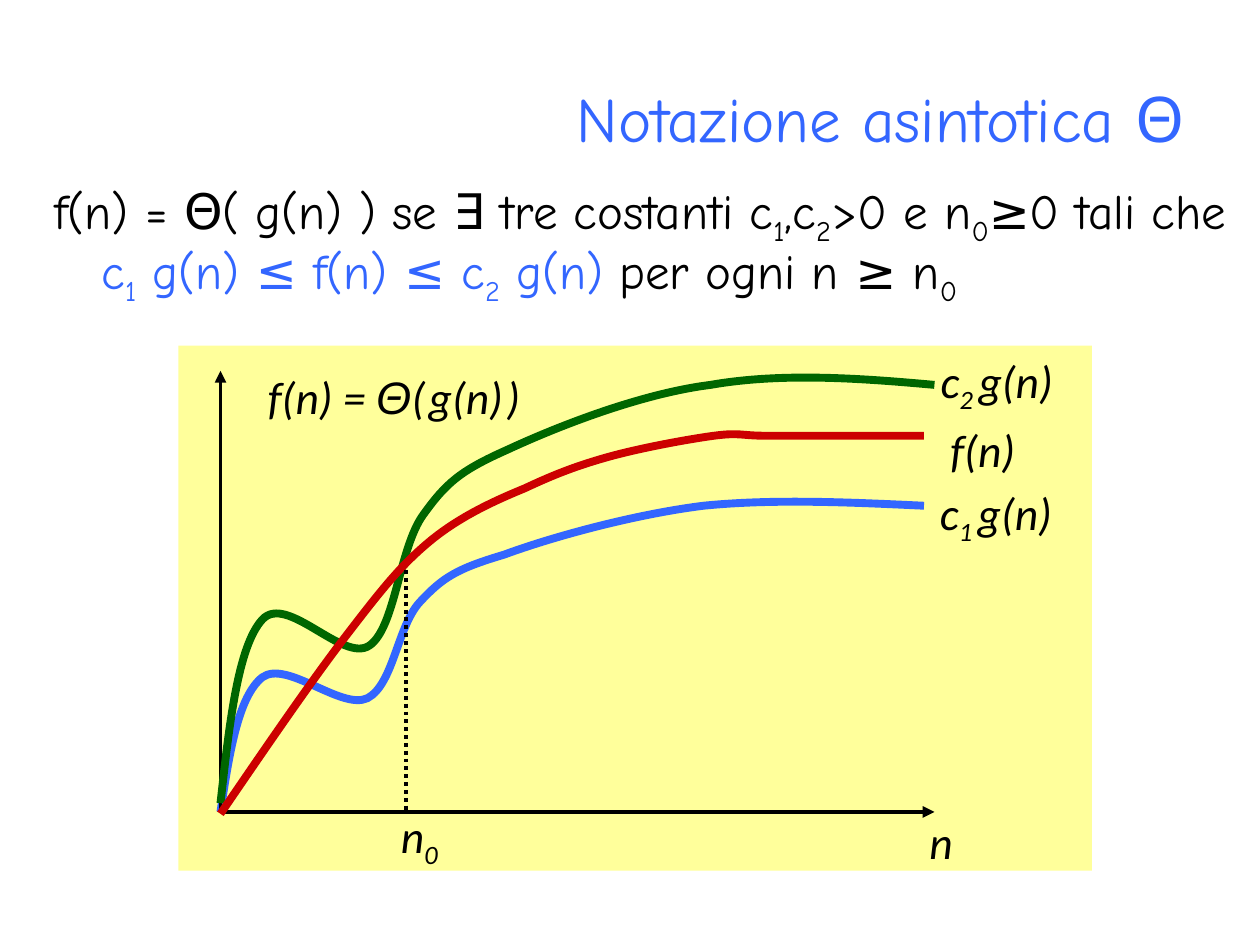
from dataclasses import dataclass

from lxml import etree
from pptx import Presentation
from pptx import util as u
from pptx.dml.color import RGBColor
from pptx.enum import dml, shapes, text
from pptx.oxml.ns import qn


@dataclass(frozen=True)
class Theme:
    ink: str = "000000"
    blue: str = "3366FF"
    green: str = "006600"
    red: str = "CC0000"
    panel: str = "FFFF9B"
    heading_font: str = "Comic Neue"
    label_font: str = "Calibri"
    symbol_font: str = "Arial"
    title_size: int = 36
    body_size: int = 28
    label_size: int = 26
    gap_size: int = 14
    thin_gap_size: int = 8
    axis_width: float = 2.25
    curve_width: float = 4.5


class Board:
    def __init__(self, page, theme):
        self.page = page
        self.theme = theme

    def place(self, box, left, top, width, height):
        box.left, box.top = u.Pt(left), u.Pt(top)
        box.width, box.height = u.Pt(width), u.Pt(height)

    def style(self, font, name, size, color, italic=False):
        font.name, font.size, font.italic = name, u.Pt(size), italic
        font.color.rgb = RGBColor.from_string(color)

    def add_spans(self, para, content, name, size, color, italic=False):
        for index, piece in enumerate(content.split("_")):
            parts = [(piece[:1], True), (piece[1:], False)] if index else [(piece, False)]
            for words, lowered in parts:
                if words:
                    span = para.add_run()
                    span.text = words
                    self.style(span.font, name, size, color, italic)
                    if lowered:
                        span.font._element.set("baseline", "-25000")

    def hang(self, para, size):
        para.space_before = u.Pt(size * 0.2)
        properties = para._p.get_or_add_pPr()
        properties.set("marL", str(u.Pt(27)))
        properties.set("indent", str(u.Pt(-27)))

    def title(self, content, bounds):
        box = self.page.shapes.title
        self.place(box, *bounds)
        frame = box.text_frame
        frame.auto_size = text.MSO_AUTO_SIZE.NONE
        frame.vertical_anchor = text.MSO_ANCHOR.TOP
        para = frame.paragraphs[0]
        para.alignment = text.PP_ALIGN.RIGHT
        look = self.theme.heading_font, self.theme.title_size, self.theme.blue
        self.style(para.font, *look)
        self.hang(para, self.theme.title_size)
        self.add_spans(para, content, *look)

    def body(self, spans, bounds):
        frame = self.page.shapes.add_textbox(*map(u.Pt, bounds)).text_frame
        frame.word_wrap = True
        para = frame.paragraphs[0]
        para.line_spacing = 0.9
        self.hang(para, self.theme.body_size)
        for content, color in spans:
            self.add_spans(para, content, self.theme.heading_font, self.theme.body_size, color)

    def label(self, spans, left, top, width):
        frame = self.page.shapes.add_textbox(*map(u.Pt, (left, top, width, 38))).text_frame
        frame.word_wrap = False
        frame.auto_size = text.MSO_AUTO_SIZE.SHAPE_TO_FIT_TEXT
        para = frame.paragraphs[0]
        for content, *special in spans:
            name, size = special or (self.theme.label_font, self.theme.label_size)
            self.add_spans(para, content, name, size, self.theme.ink, True)

    def panel(self, bounds):
        box = self.page.shapes.add_shape(shapes.MSO_SHAPE.RECTANGLE, *map(u.Pt, bounds))
        box.shadow.inherit = False
        box.fill.solid()
        box.fill.fore_color.rgb = RGBColor.from_string(self.theme.panel)
        box.line.fill.background()

    def stroke(self, line, color, width):
        line.color.rgb = RGBColor.from_string(color)
        line.width = u.Pt(width)

    def line(self, start, end, arrow=False, dotted=False):
        connector = self.page.shapes.add_connector(
            shapes.MSO_CONNECTOR.STRAIGHT, *map(u.Pt, (*start, *end)))
        self.stroke(connector.line, self.theme.ink, self.theme.axis_width)
        if dotted:
            connector.line.dash_style = dml.MSO_LINE.ROUND_DOT
        if arrow:
            etree.SubElement(connector.line._get_or_add_ln(), qn("a:tailEnd"), type="triangle")
        etree.SubElement(connector._element.spPr, qn("a:effectLst"))

    def curve(self, points, color):
        start, *controls = points
        builder = self.page.shapes.build_freeform(*start, scale=u.Pt(1))
        builder.add_line_segments(controls, close=False)
        box = builder.convert_to_shape()
        box.shadow.inherit = False
        box.fill.background()
        self.stroke(box.line, color, self.theme.curve_width)
        outline = box._element.find(".//" + qn("a:path"))
        segments = outline.findall(qn("a:lnTo"))
        for index in range(0, len(segments), 3):
            bend = etree.SubElement(outline, qn("a:cubicBezTo"))
            for segment in segments[index:index + 3]:
                bend.append(segment[0])
                outline.remove(segment)


BLUE_CURVE = [
    (126, 464), (131, 431), (136, 398), (150, 387.4), (164, 376.6), (195, 406), (210, 399),
    (224.6, 391), (227, 358), (240, 344), (252.7, 330.5), (260.6, 325.4), (288, 317),
    (314.6, 307.4), (362, 294), (402, 289.4), (442, 285), (484.6, 287.3), (528, 289.4)]
GREEN_CURVE = [
    (126, 459.4), (131, 414), (136, 368.6), (150.5, 354.2), (164, 339), (196, 379), (211, 369),
    (226, 359), (228, 313), (242, 294.5), (255, 276), (263, 269), (290, 257),
    (317.5, 244), (366, 225.4), (406, 219.6), (446, 213), (490, 216), (534, 219.6)]
RED_CURVE = [
    (126, 465), (152, 427), (178, 389), (198, 363), (218, 337), (229, 323), (246, 309),
    (263, 295), (283, 286.5), (300, 279), (317, 271), (330, 266), (348, 261.4),
    (366, 256.3), (393, 251.3), (408, 249), (423, 247), (423, 249), (438, 249),
    (453, 249), (483, 249), (498, 249), (513, 249), (523, 249), (528, 249)]


def main():
    theme = Theme()
    deck = Presentation()
    deck.slide_width, deck.slide_height = u.Pt(720), u.Pt(540)
    board = Board(deck.slides.add_slide(deck.slide_layouts[5]), theme)

    board.title("Notazione asintotica Θ", (36, 42, 648, 72))
    board.body([
        ("f(n) = Θ( g(n) ) se ∃ tre costanti c_1,c_2>0 e n_0≥0 tali che ", theme.ink),
        ("c_1 g(n) ≤ f(n) ≤ c_2 g(n) ", theme.blue),
        ("per ogni n ≥ n_0", theme.ink),
    ], (24, 100, 684, 192))

    board.panel((102, 197.5, 522, 300))
    board.curve(BLUE_CURVE, theme.blue)

    gap = (" ", theme.label_font, theme.gap_size)
    thin_gap = (" ", theme.label_font, theme.thin_gap_size)
    board.label([("n_0",)], 222, 458, 36)
    board.label([("n",)], 524, 461.5, 27)
    board.label([
        ("f(n) = ",), ("Θ", theme.symbol_font, theme.label_size), ("(",),
        thin_gap, ("g(n)",), thin_gap, (")",),
    ], 146, 207.5, 166)
    board.label([("f(n)",)], 536, 237.5, 52)
    board.label([("c_1",), gap, ("g(n)",)], 530, 273.5, 81)

    origin = (126, 464)
    board.line(origin, (126, 212), arrow=True)
    board.line(origin, (534, 464), arrow=True)
    board.curve(GREEN_CURVE, theme.green)
    board.curve(RED_CURVE, theme.red)
    board.label([("c_2",), gap, ("g(n)",)], 530.5, 198, 81)
    board.line((232, 326), (232, 464), dotted=True)

    deck.save("out.pptx")


if __name__ == "__main__":
    main()
